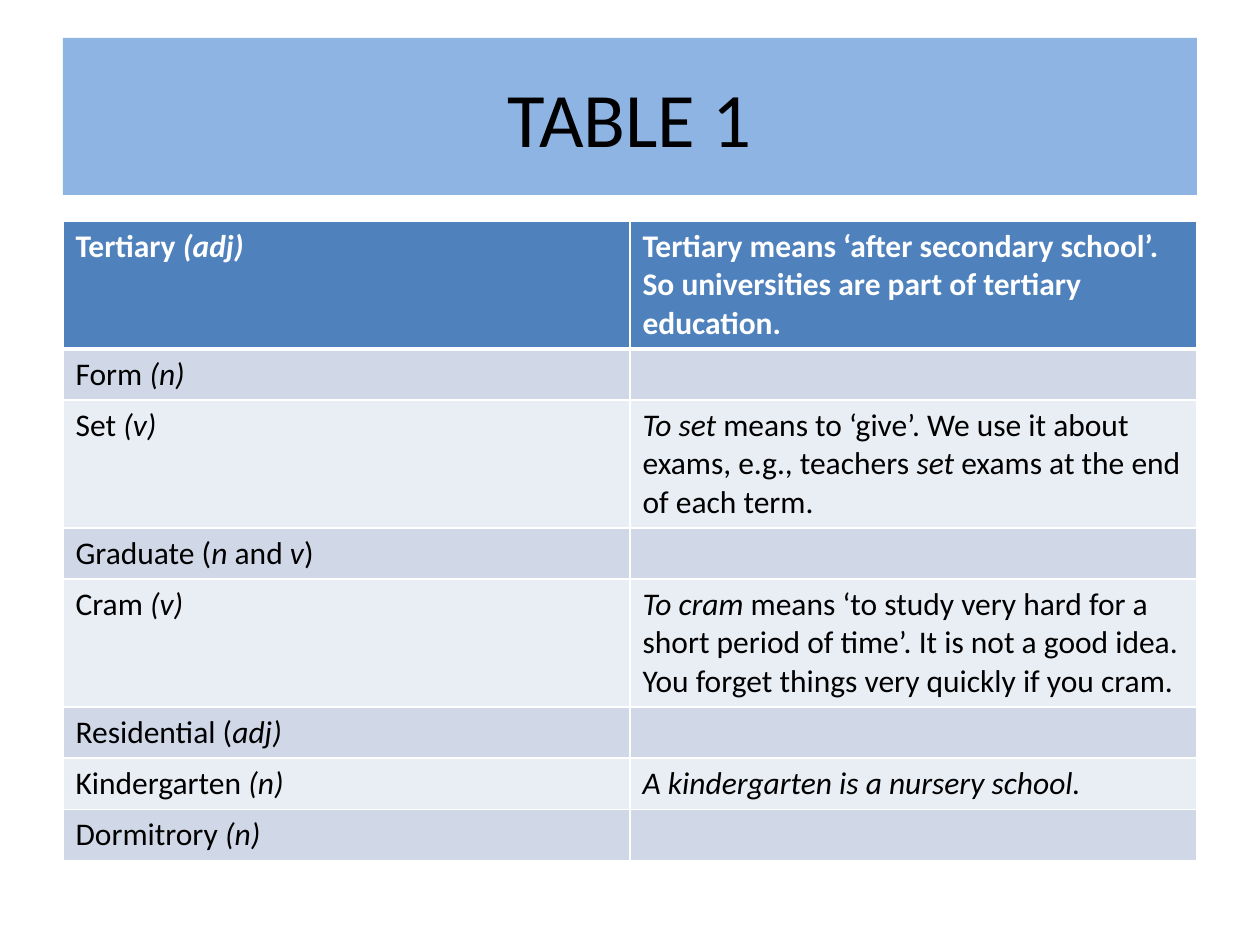
from dataclasses import dataclass

import lxml.etree
import pptx
import pptx.dml.color
import pptx.enum.shapes
import pptx.enum.text
import pptx.oxml.ns
import pptx.util

EMU_PER_PX = 914400 / 126


@dataclass(frozen=True)
class Theme:
    font: str = "Calibri"
    title_size: int = 44
    body_size: int = 18
    title_fill: str = "8EB4E3"
    header_fill: str = "4F81BD"
    odd_fill: str = "D0D8E8"
    even_fill: str = "E9EDF4"
    dark: str = "000000"
    light: str = "FFFFFF"
    border_width: int = 1
    header_border_width: int = 3


@dataclass(frozen=True)
class Run:
    text: str
    italic: bool = False


@dataclass(frozen=True)
class Entry:
    term: tuple[Run, ...]
    meaning: tuple[Run, ...] = ()
    lines: int = 1


THEME = Theme()
LEFT, WIDTH = 63, 1134
TITLE_TOP, TITLE_HEIGHT = 38, 157
TABLE_TOP = 221
ROW_HEIGHTS = {1: 51, 3: 128}

ENTRIES = (
    Entry(
        (Run("Tertiary "), Run("(adj)", True)),
        (Run("Tertiary means ‘after secondary school’. So universities are part of tertiary education."),),
        lines=3,
    ),
    Entry((Run("Form "), Run("(n)", True))),
    Entry(
        (Run("Set "), Run("(v)", True)),
        (
            Run("To set", True),
            Run(" means to ‘give’. We use it about exams, e.g., teachers "),
            Run("set", True),
            Run(" exams at the end of each term."),
        ),
        lines=3,
    ),
    Entry((Run("Graduate ("), Run("n", True), Run(" and "), Run("v", True), Run(")"))),
    Entry(
        (Run("Cram "), Run("(v)", True)),
        (
            Run("To cram", True),
            Run(
                " means ‘to study very hard for a short period of time’. It is not a good idea. "
                "You forget things very quickly if you cram."
            ),
        ),
        lines=3,
    ),
    Entry((Run("Residential ("), Run("adj)", True))),
    Entry((Run("Kindergarten "), Run("(n)", True)), (Run("A kindergarten is a nursery school.", True),)),
    Entry((Run("Dormitrory "), Run("(n)", True))),
)


def px(length: int) -> int:
    return round(length * EMU_PER_PX)


def rgb(value: str) -> pptx.dml.color.RGBColor:
    return pptx.dml.color.RGBColor.from_string(value)


def write(frame, runs: tuple[Run, ...], *, size: int, color: str, bold: bool = False,
          align=pptx.enum.text.PP_ALIGN.LEFT) -> None:
    frame.word_wrap = True
    paragraph = frame.paragraphs[0]
    paragraph.alignment = align
    paragraph.font.size = pptx.util.Pt(size)
    for run in runs:
        part = paragraph.add_run()
        part.text = run.text
        part.font.name = THEME.font
        part.font.size = pptx.util.Pt(size)
        part.font.bold = bold
        part.font.italic = run.italic
        part.font.color.rgb = rgb(color)


def set_borders(cell, top: int, bottom: int) -> None:
    properties = cell._tc.get_or_add_tcPr()
    qn = pptx.oxml.ns.qn
    widths = {"lnL": THEME.border_width, "lnR": THEME.border_width, "lnT": top, "lnB": bottom}
    for index, (side, width) in enumerate(widths.items()):
        line = lxml.etree.Element(qn(f"a:{side}"), w=str(pptx.util.Pt(width)))
        fill = lxml.etree.SubElement(line, qn("a:solidFill"))
        lxml.etree.SubElement(fill, qn("a:srgbClr"), val=THEME.light)
        properties.insert(index, line)


def add_title(slide, text: str) -> None:
    shape = slide.shapes.add_shape(
        pptx.enum.shapes.MSO_SHAPE.RECTANGLE, px(LEFT), px(TITLE_TOP), px(WIDTH), px(TITLE_HEIGHT)
    )
    shape.shadow.inherit = False
    shape.fill.solid()
    shape.fill.fore_color.rgb = rgb(THEME.title_fill)
    shape.line.fill.background()
    shape.text_frame.vertical_anchor = pptx.enum.text.MSO_ANCHOR.MIDDLE
    write(shape.text_frame, (Run(text),), size=THEME.title_size, color=THEME.dark,
          align=pptx.enum.text.PP_ALIGN.CENTER)


def add_vocabulary_table(slide, entries: tuple[Entry, ...]) -> None:
    heights = [ROW_HEIGHTS[entry.lines] for entry in entries]
    table = slide.shapes.add_table(
        len(entries), 2, px(LEFT), px(TABLE_TOP), px(WIDTH), px(sum(heights))
    ).table
    table.first_row = True
    table.horz_banding = False
    for index, (entry, height) in enumerate(zip(entries, heights)):
        table.rows[index].height = px(height)
        header = index == 0
        fill = THEME.header_fill if header else THEME.odd_fill if index % 2 else THEME.even_fill
        top = THEME.header_border_width if index == 1 else THEME.border_width
        bottom = THEME.header_border_width if header else THEME.border_width
        for column, runs in enumerate((entry.term, entry.meaning)):
            cell = table.cell(index, column)
            cell.fill.solid()
            cell.fill.fore_color.rgb = rgb(fill)
            set_borders(cell, top, bottom)
            write(cell.text_frame, runs, size=THEME.body_size, bold=header,
                  color=THEME.light if header else THEME.dark)


def main() -> None:
    presentation = pptx.Presentation()
    presentation.slide_width = px(1260)
    presentation.slide_height = px(945)
    slide = presentation.slides.add_slide(presentation.slide_layouts[6])
    add_title(slide, "TABLE 1")
    add_vocabulary_table(slide, ENTRIES)
    presentation.save("out.pptx")


if __name__ == "__main__":
    main()
